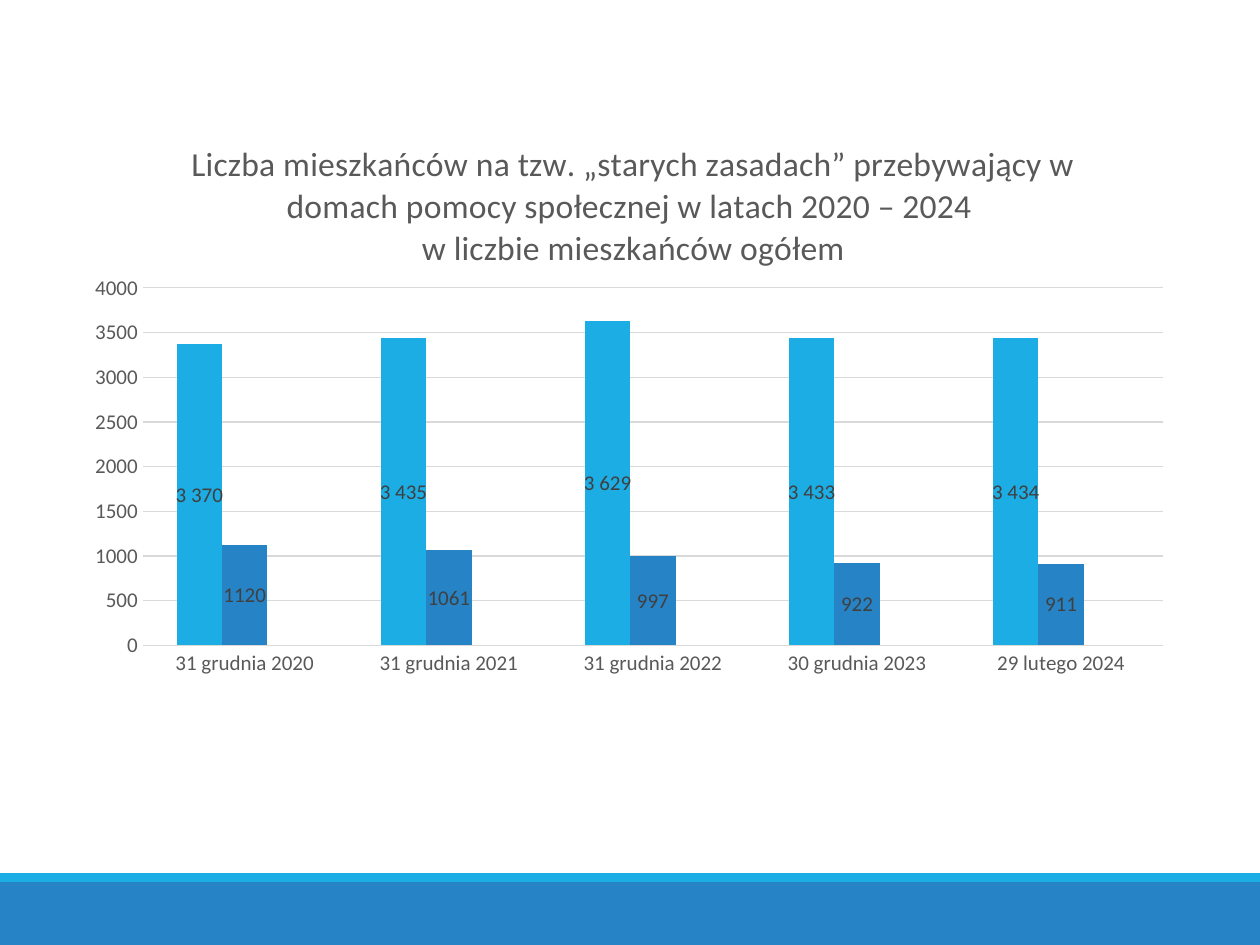
from lxml import etree
from pptx import Presentation
from pptx.chart.data import CategoryChartData
from pptx.dml.color import RGBColor
from pptx.enum.chart import XL_CHART_TYPE, XL_LABEL_POSITION, XL_TICK_MARK
from pptx.enum.shapes import MSO_SHAPE
from pptx.oxml.ns import qn
from pptx.util import Inches, Pt

COLORS = {
    "sky": "1CADE4", "blue": "2683C6", "teal": "28C4CC",
    "grid": "D9D9D9", "text": "595959", "label": "404040",
}


def style_font(font, size, color):
    font.name = "Calibri"
    font.size = Pt(size)
    font.bold = False
    font.color.rgb = RGBColor.from_string(COLORS[color])


def place(element, index, settings):
    """Give a chart part a manual layout."""
    layout = element.find(qn("c:layout"))
    if layout is None:
        layout = etree.Element(qn("c:layout"))
        element.insert(index, layout)
    manual = etree.SubElement(layout, qn("c:manualLayout"))
    for tag, value in settings.items():
        etree.SubElement(manual, qn(f"c:{tag}")).set("val", str(value))


prs = Presentation()
prs.slide_width, prs.slide_height = Inches(10), Inches(7.5)
slide = prs.slides.add_slide(prs.slide_layouts[6])

# Footer bands
for top, height, color in [(7, 0.5, "blue"), (6.93, 0.07, "sky")]:
    band = slide.shapes.add_shape(
        MSO_SHAPE.RECTANGLE, 0, Inches(top), Inches(10), Inches(height))
    band.shadow.inherit = False
    band.fill.solid()
    band.fill.fore_color.rgb = RGBColor.from_string(COLORS[color])
    band.line.fill.background()

# Chart data; the empty third series keeps its place in each group
all_residents = [3370, 3435, 3629, 3433, 3434]
old_rules_residents = [1120, 1061, 997, 922, 911]
data = CategoryChartData()
data.categories = ["31 grudnia 2020", "31 grudnia 2021", "31 grudnia 2022",
                   "30 grudnia 2023", "29 lutego 2024"]
data.add_series("Series 1", all_residents)
data.add_series("Series 2", old_rules_residents)
data.add_series("Series 3", [None] * 5)
chart = slide.shapes.add_chart(
    XL_CHART_TYPE.COLUMN_CLUSTERED, Inches(0.51), Inches(0.99),
    Inches(8.9), Inches(4.98), data).chart
chart.has_legend = False
chart.font.name = "Calibri"
chart.font.size = Pt(10)

# Title
title_frame = chart.chart_title.text_frame
title_lines = [
    "Liczba mieszkańców na tzw. „starych zasadach” przebywający w "
    "domach pomocy społecznej w latach 2020 – 2024 ",
    "w liczbie mieszkańców ogółem",
]
for number, line in enumerate(title_lines):
    paragraph = title_frame.add_paragraph() if number else title_frame.paragraphs[0]
    style_font(paragraph.font, 19.2, "text")
    run = paragraph.add_run()
    run.text = line
    style_font(run.font, 19.2, "text")
chart.chart_title.include_in_layout = False
place(chart.chart_title._element, 1,
      {"xMode": "edge", "yMode": "edge", "x": 0.11, "y": 0.02})

# Plot area
plot = chart.plots[0]
plot.gap_width = 150
plot.overlap = 0
plot.vary_by_categories = False
place(chart._chartSpace.chart.plotArea, 0,
      {"layoutTarget": "inner", "xMode": "edge", "yMode": "edge",
       "x": 0.07, "y": 0.26, "w": 0.91, "h": 0.57})

# Axes
for axis in (chart.category_axis, chart.value_axis):
    axis.major_tick_mark = axis.minor_tick_mark = XL_TICK_MARK.NONE
    style_font(axis.tick_labels.font, 12, "text")
value_axis = chart.value_axis
value_axis.minimum_scale, value_axis.maximum_scale = 0, 4000
value_axis.major_unit = 500
value_axis.has_major_gridlines = True
value_axis.format.line.fill.background()
for line in (chart.category_axis.format.line, value_axis.major_gridlines.format.line):
    line.color.rgb = RGBColor.from_string(COLORS["grid"])
    line.width = Pt(0.75)

# Columns and value labels
for series, color in zip(plot.series, ["sky", "blue", "teal"]):
    series.format.fill.solid()
    series.format.fill.fore_color.rgb = RGBColor.from_string(COLORS[color])
    series.invert_if_negative = False
    labels = series.data_labels
    labels.show_value = True
    labels.position = XL_LABEL_POSITION.CENTER
    style_font(labels.font, 12, "label")

# Totals are labelled with a space between thousands
for index, total in enumerate(all_residents):
    label = plot.series[0].points[index].data_label
    run = label.text_frame.paragraphs[0].add_run()
    run.text = f"{total:,}".replace(",", " ")
    style_font(run.font, 12, "label")
    label.position = XL_LABEL_POSITION.CENTER

prs.save("out.pptx")
